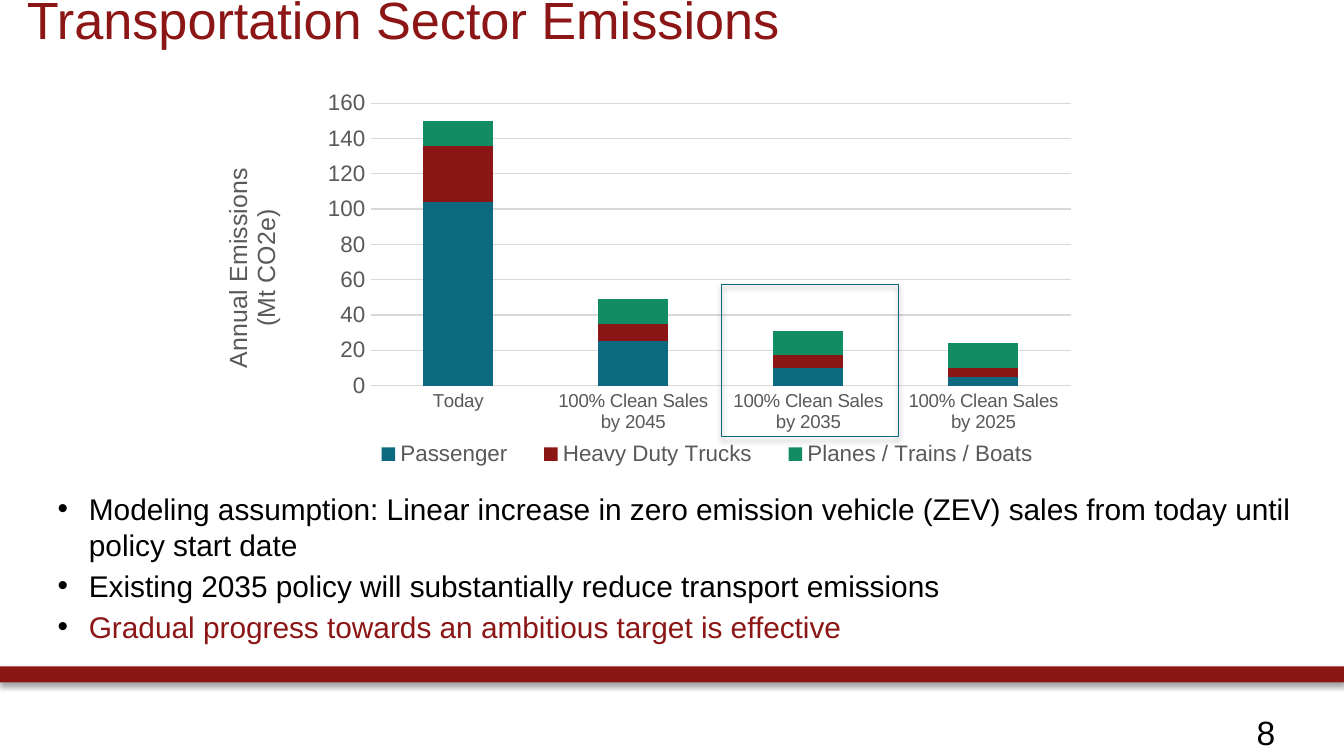
import pptx
import pptx.chart.data
import pptx.dml.color
import pptx.enum.chart
import pptx.enum.shapes
import pptx.enum.text
import pptx.oxml
import pptx.oxml.ns
import pptx.util
from pptx.util import Cm

COLORS = {
    "cardinal": "8C1515",
    "blue": "0D697F",
    "green": "128C63",
    "black": "000000",
    "gray": "595959",
    "grid": "D9D9D9",
}
FONT = "Arial"
DRAWING = pptx.oxml.ns.nsdecls("a")
CHART = pptx.oxml.ns.nsdecls("c")


def color(name):
    return pptx.dml.color.RGBColor.from_string(COLORS[name])


def format_font(font, size, color_name):
    font.name = FONT
    font.size = pptx.util.Pt(size)
    font.bold = False
    font.color.rgb = color(color_name)


def place(shape, left, top, width, height):
    shape.left, shape.top = Cm(left), Cm(top)
    shape.width, shape.height = Cm(width), Cm(height)


def set_frame(frame, left, top, right, bottom, anchor):
    frame.word_wrap = True
    frame.auto_size = pptx.enum.text.MSO_AUTO_SIZE.NONE
    frame.vertical_anchor = anchor
    frame.margin_left, frame.margin_top = Cm(left), Cm(top)
    frame.margin_right, frame.margin_bottom = Cm(right), Cm(bottom)


def add_bullet(paragraph):
    properties = paragraph._p.get_or_add_pPr()
    properties.set("marL", str(Cm(0.59)))
    properties.set("indent", str(-Cm(0.59)))
    for element in (
        f'<a:buClr {DRAWING}><a:srgbClr val="{COLORS["black"]}"/></a:buClr>',
        f'<a:buFont {DRAWING} typeface="{FONT}"/>',
        f'<a:buChar {DRAWING} char="•"/>',
    ):
        properties.append(pptx.oxml.parse_xml(element))


def write_text(frame, text, size=16, color_name="black", line_spacing=1.0,
               space_before=0, bullet=False, first=True):
    paragraph = frame.paragraphs[0] if first else frame.add_paragraph()
    if bullet:
        add_bullet(paragraph)
    paragraph.alignment = pptx.enum.text.PP_ALIGN.LEFT
    paragraph.line_spacing = line_spacing
    paragraph.space_before = pptx.util.Pt(0 if first else space_before)
    run = paragraph.add_run()
    run.text = text
    format_font(run.font, size, color_name)


def add_rectangle(slide, left, top, width, height, fill=None, line=None):
    shape = slide.shapes.add_shape(
        pptx.enum.shapes.MSO_SHAPE.RECTANGLE,
        Cm(left), Cm(top), Cm(width), Cm(height))
    if fill:
        shape.fill.solid()
        shape.fill.fore_color.rgb = color(fill)
    else:
        shape.fill.background()
    if line:
        shape.line.color.rgb = color(line)
        shape.line.width = pptx.util.Pt(0.75)
    else:
        shape.line.fill.background()
    shape.shadow.inherit = False
    effects = shape._element.spPr.find(pptx.oxml.ns.qn("a:effectLst"))
    effects.append(pptx.oxml.parse_xml(
        f'<a:outerShdw {DRAWING} blurRad="{pptx.util.Pt(3.1)}" '
        f'dist="{pptx.util.Pt(1.8)}" dir="5400000" rotWithShape="0">'
        f'<a:srgbClr val="{COLORS["black"]}"><a:alpha val="35000"/></a:srgbClr>'
        '</a:outerShdw>'))


def set_layout(element, x, y, width=None, height=None, inner=False):
    for old in element.findall(pptx.oxml.ns.qn("c:layout")):
        element.remove(old)
    parts = '<c:layoutTarget val="inner"/>' if inner else ""
    parts += '<c:xMode val="edge"/><c:yMode val="edge"/>'
    for tag, value in (("x", x), ("y", y), ("w", width), ("h", height)):
        if value is not None:
            parts += f'<c:{tag} val="{value}"/>'
    layout = pptx.oxml.parse_xml(
        f"<c:layout {CHART}><c:manualLayout>{parts}</c:manualLayout></c:layout>")
    before = [child for child in element if child.tag in (
        pptx.oxml.ns.qn("c:tx"), pptx.oxml.ns.qn("c:legendPos"))]
    element.insert(element.index(before[-1]) + 1 if before else 0, layout)


def format_axes(chart):
    categories, values = chart.category_axis, chart.value_axis
    for axis, size in ((categories, 10), (values, 12)):
        axis.major_tick_mark = pptx.enum.chart.XL_TICK_MARK.NONE
        axis.minor_tick_mark = pptx.enum.chart.XL_TICK_MARK.NONE
        format_font(axis.tick_labels.font, size, "gray")
    for line in (categories.format.line, values.major_gridlines.format.line):
        line.color.rgb = color("grid")
        line.width = pptx.util.Pt(0.75)
    values.format.line.fill.background()
    values.minimum_scale, values.maximum_scale, values.major_unit = 0, 160, 20
    title = values.axis_title
    title.text_frame.text = "Annual Emissions\n(Mt CO2e)"
    for paragraph in title.text_frame.paragraphs:
        format_font(paragraph.runs[0].font, 13.3, "gray")
    title.text_frame._txBody.bodyPr.set("rot", "-5400000")
    title.text_frame._txBody.bodyPr.set("vert", "horz")
    set_layout(title._element, 0.03, 0.2)


def add_emissions_chart(slide):
    data = pptx.chart.data.CategoryChartData()
    data.categories = ["Today"] + [
        f"100% Clean Sales by {year}" for year in (2045, 2035, 2025)]
    series_list = (
        ("Passenger", (104, 25, 10, 5), "blue"),
        ("Heavy Duty Trucks", (32, 10, 7, 5), "cardinal"),
        ("Planes / Trains / Boats", (14, 14, 14, 14), "green"),
    )
    for name, values, _ in series_list:
        data.add_series(name, values)
    chart = slide.shapes.add_chart(
        pptx.enum.chart.XL_CHART_TYPE.COLUMN_STACKED,
        Cm(3.61), Cm(1.57), Cm(16.97), Cm(7.62), data).chart
    format_font(chart.font, 10, "black")
    chart.has_title = False
    plot = chart.plots[0]
    plot.gap_width, plot.overlap = 150, 100
    plot.vary_by_categories = False
    for series, (_, _, fill) in zip(plot.series, series_list):
        series.format.fill.solid()
        series.format.fill.fore_color.rgb = color(fill)
    format_axes(chart)
    chart.has_legend = True
    chart.legend.position = pptx.enum.chart.XL_LEGEND_POSITION.BOTTOM
    chart.legend.include_in_layout = False
    format_font(chart.legend.font, 12, "gray")
    set_layout(chart.legend._element, 0.18, 0.87, 0.79, 0.1)
    plot_area = chart._chartSpace.chart.plotArea
    set_layout(plot_area, 0.2, 0.05, 0.78, 0.7, inner=True)


def main():
    presentation = pptx.Presentation()
    presentation.slide_width, presentation.slide_height = Cm(25.4), Cm(14.28)
    slide = presentation.slides.add_slide(presentation.slide_layouts[1])
    anchors = pptx.enum.text.MSO_ANCHOR

    title = slide.shapes.title
    place(title, 0.51, 0, 23.39, 1.9)
    set_frame(title.text_frame, 0, 0, 0.18, 0.96, anchors.BOTTOM)
    write_text(title.text_frame, "Transportation Sector Emissions",
               size=28, color_name="cardinal", line_spacing=0.85)

    body = slide.placeholders[1]
    place(body, 1.09, 9.17, 23.77, 2.51)
    set_frame(body.text_frame, 0, 0.1, 0, 0.1, anchors.TOP)
    points = (
        ("Modeling assumption: Linear increase in zero emission vehicle (ZEV) "
         "sales from today until policy start date", "black"),
        ("Existing 2035 policy will substantially reduce transport emissions",
         "black"),
        ("Gradual progress towards an ambitious target is effective",
         "cardinal"),
    )
    for index, (text, color_name) in enumerate(points):
        write_text(body.text_frame, text, color_name=color_name, bullet=True,
                   space_before=2.7, first=index == 0)

    add_rectangle(slide, 0, 12.59, 25.4, 0.3, fill="cardinal")
    add_emissions_chart(slide)
    add_rectangle(slide, 13.64, 5.38, 3.34, 2.87, line="blue")

    number = slide.shapes.add_textbox(Cm(23.5), Cm(13.32), Cm(1.3), Cm(0.97))
    set_frame(number.text_frame, 0.25, 0.13, 0.25, 0.13, anchors.TOP)
    write_text(number.text_frame, "8", size=18)
    presentation.save("out.pptx")


if __name__ == "__main__":
    main()
